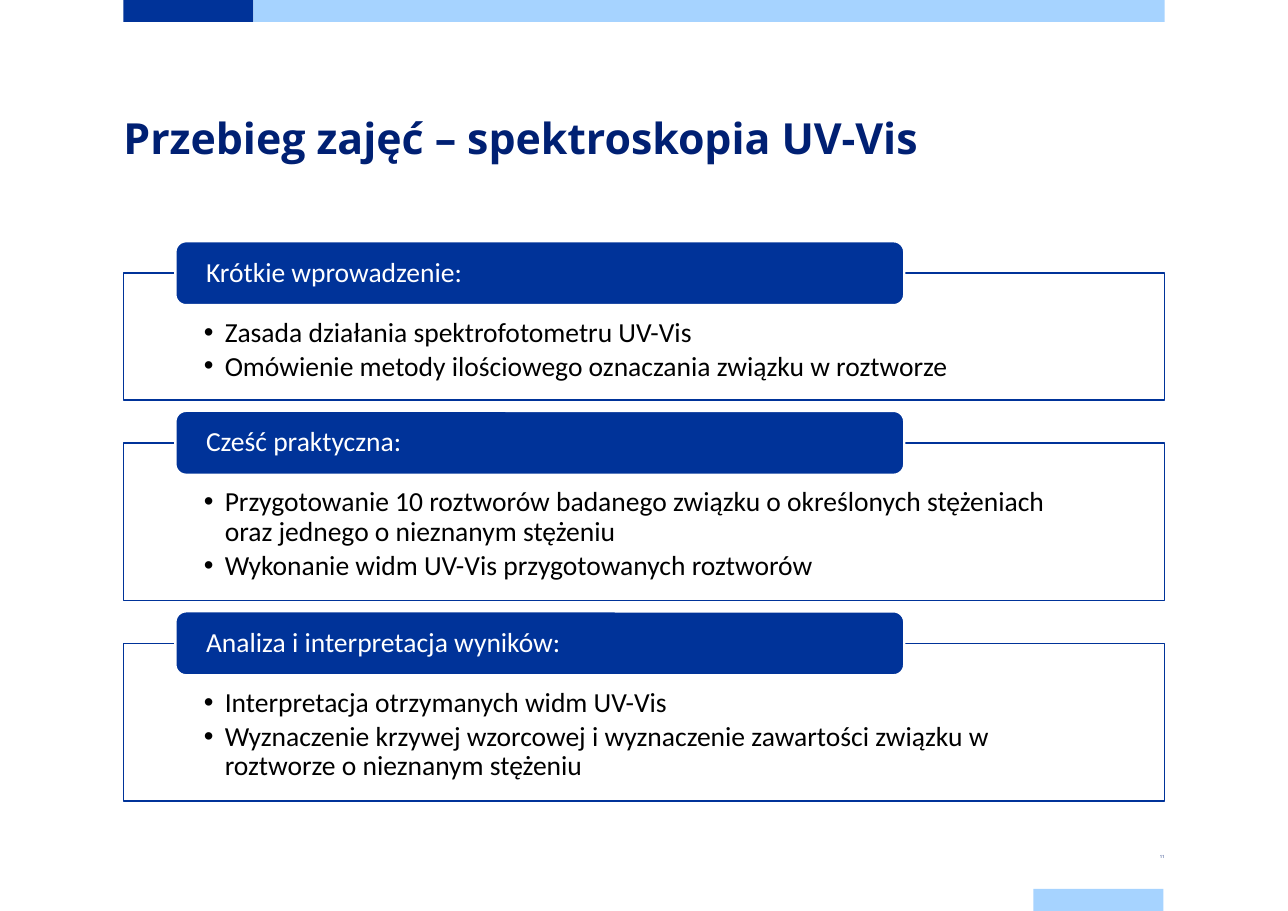
from lxml import etree
from pptx import Presentation
from pptx.dml.color import RGBColor
from pptx.enum.shapes import MSO_SHAPE
from pptx.enum.text import MSO_ANCHOR, MSO_AUTO_SIZE, PP_ALIGN
from pptx.oxml.ns import qn
from pptx.util import Inches, Pt

RECT = MSO_SHAPE.RECTANGLE
ROUND = MSO_SHAPE.ROUNDED_RECTANGLE
TOP = MSO_ANCHOR.TOP
MIDDLE = MSO_ANCHOR.MIDDLE
LEFT = PP_ALIGN.LEFT
RIGHT = PP_ALIGN.RIGHT
FIXED = MSO_AUTO_SIZE.NONE

WIDE, HIGH = 11.69, 8.27
EDGE, COL, COLS = 1.12, 1.18, 8
SPAN = 9.45
BAR = 0.2
GAP = 0.39
LINE = 0.28
TAB = 0.58
NAVY, BLUE, SKY = "002073", "003399", "A6D3FF"
WHITE, BLACK = "FFFFFF", "000000"

STEPS = [
    ("Krótkie wprowadzenie:", 2, [
        "Zasada działania spektrofotometru UV-Vis",
        "Omówienie metody ilościowego oznaczania związku w roztworze",
    ]),
    ("Cześć praktyczna:", 3, [
        "Przygotowanie 10 roztworów badanego związku o określonych "
        "stężeniach oraz jednego o nieznanym stężeniu",
        "Wykonanie widm UV-Vis przygotowanych roztworów",
    ]),
    ("Analiza i interpretacja wyników:", 3, [
        "Interpretacja otrzymanych widm UV-Vis",
        "Wyznaczenie krzywej wzorcowej i wyznaczenie zawartości związku "
        "w roztworze o nieznanym stężeniu",
    ]),
]


def paint(color, tone):
    color.rgb = RGBColor.from_string(tone)


def place(box):
    return [Inches(part) for part in box]


def block(slide, kind, box, fill, edge=None, width=1):
    shape = slide.shapes.add_shape(kind, *place(box))
    shape.shadow.inherit = False
    shape.fill.solid()
    paint(shape.fill.fore_color, fill)
    if edge:
        paint(shape.line.color, edge)
        shape.line.width = Pt(width)
    else:
        shape.line.fill.background()
    return shape


def bullet(para, indent):
    props = para._p.get_or_add_pPr()
    props.set("marL", str(Inches(indent)))
    props.set("indent", str(-Inches(indent)))
    etree.SubElement(props, qn("a:buFont")).set("typeface", "Arial")
    etree.SubElement(props, qn("a:buChar")).set("char", "•")


def write(shape, lines, size=18, face="Calibri", tone=BLACK, bold=False,
          align=LEFT, anchor=TOP, pad=(0, 0, 0, 0), lead=0.9, after=0,
          indent=0):
    frame = shape.text_frame
    frame.auto_size = FIXED
    frame.word_wrap = True
    frame.vertical_anchor = anchor
    (frame.margin_left, frame.margin_top,
     frame.margin_right, frame.margin_bottom) = place(pad)
    for rank, line in enumerate(lines):
        para = frame.add_paragraph() if rank else frame.paragraphs[0]
        if indent:
            bullet(para, indent)
        para.alignment = align
        para.line_spacing = lead
        para.space_after = Pt(after)
        run = para.add_run()
        run.text = line
        run.font.name = face
        run.font.size = Pt(size)
        run.font.bold = bold
        paint(run.font.color, tone)


def bars(slide):
    last = EDGE + (COLS - 1) * COL
    block(slide, RECT, (EDGE, 0, COL, BAR), BLUE)
    block(slide, RECT, (EDGE + COL, 0, SPAN - COL, BAR), SKY)
    block(slide, RECT, (last, HIGH - BAR, COL, BAR), SKY)


def head(slide, box):
    title = slide.shapes.title
    title.left, title.top, title.width, title.height = place(box)
    write(title, ["Przebieg zajęć – spektroskopia UV-Vis"], size=28,
          face="Open Sans", tone=NAVY, bold=True, lead=Pt(36))


def step(slide, box, name, points):
    left, top, width, _ = box
    body = block(slide, RECT, box, WHITE, BLUE)
    write(body, points, pad=(0.73, 0.41, 0.73, 0.14), after=2.7, indent=0.19)
    label = block(slide, ROUND, (left + 0.05 * width, top - TAB / 2,
                                 0.7 * width, TAB), BLUE, WHITE, 1.5)
    write(label, [name], tone=WHITE, anchor=MIDDLE, pad=(0.25, 0, 0.25, 0))


def steps(slide, left, top, width):
    for name, rows, points in STEPS:
        height = 0.59 + rows * LINE
        step(slide, (left, top, width, height), name, points)
        top += height + GAP


def page(slide, box):
    note = slide.shapes.add_textbox(*place(box))
    write(note, ["11"], size=2.8, face="Open Sans", tone=NAVY, align=RIGHT,
          anchor=MIDDLE, pad=(0, 0.08, 0, 0.08), lead=0.7)


def main():
    deck = Presentation()
    deck.slide_width, deck.slide_height = Inches(WIDE), Inches(HIGH)
    slide = deck.slides.add_slide(deck.slide_layouts[5])
    bars(slide)
    head(slide, (EDGE, 0.98, SPAN, COL))
    steps(slide, EDGE, 2.48, SPAN)
    page(slide, (EDGE + SPAN - COL, 7.68, COL, BAR))
    deck.save("out.pptx")


if __name__ == "__main__":
    main()
